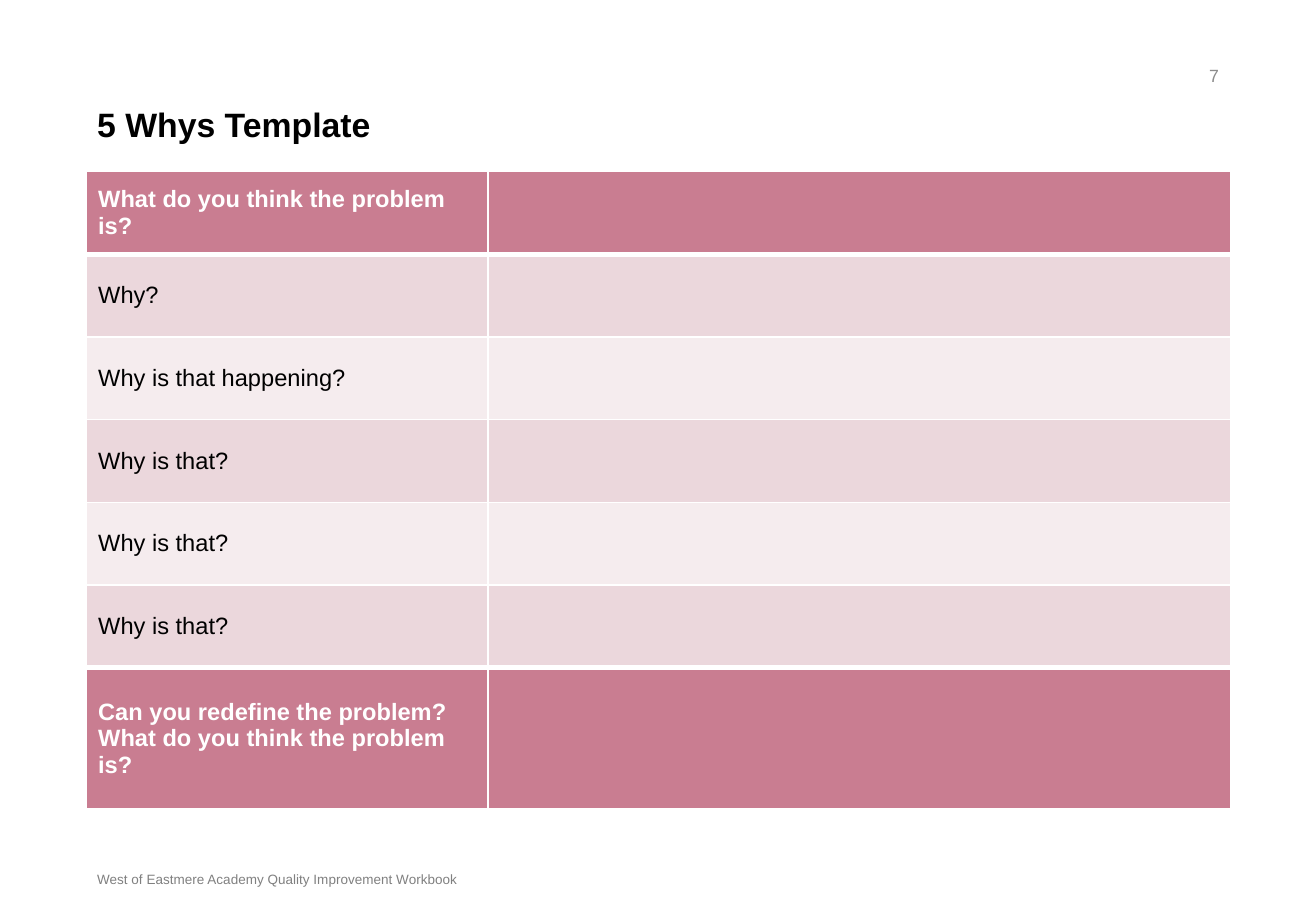
from dataclasses import dataclass

from lxml.etree import SubElement
from pptx import Presentation
from pptx.dml.color import RGBColor
from pptx.enum.text import MSO_ANCHOR, PP_ALIGN
from pptx.oxml.ns import qn
from pptx.util import Pt


@dataclass(frozen=True)
class Theme:
    font: str = "Arial"
    black: str = "000000"
    white: str = "FFFFFF"
    page_grey: str = "8C8C8C"
    footer_grey: str = "808080"
    rose: str = "C97D91"
    bands: tuple = ("EBD7DC", "F5ECEE")
    title_size: float = 20
    table_size: float = 14
    page_size: float = 10.5
    footer_size: float = 8
    thin: float = 1
    thick: float = 3


def write(frame, text, *, font, size, color, bold=False,
          align=PP_ALIGN.LEFT, spacing=None):
    """Put one formatted paragraph into a text frame."""
    para = frame.paragraphs[0]
    para.alignment = align
    if spacing:
        para.line_spacing = spacing
    span = para.add_run()
    span.text = text
    span.font.name = font
    span.font.size = Pt(size)
    span.font.bold = bold
    span.font.color.rgb = RGBColor.from_string(color)


class PageBuilder:
    def __init__(self, page, theme):
        self.page = page
        self.theme = theme

    def text(self, text, left, top, width, height, *,
             anchor=MSO_ANCHOR.TOP, **style):
        box = self.page.shapes.add_textbox(Pt(left), Pt(top), Pt(width), Pt(height))
        frame = box.text_frame
        frame.word_wrap = True
        frame.vertical_anchor = anchor
        write(frame, text, font=self.theme.font, **style)

    def borders(self, cell, top, bottom):
        """Draw the four cell edges; they must come before the fill."""
        theme = self.theme
        properties = cell._tc.get_or_add_tcPr()
        edges = {"L": theme.thin, "R": theme.thin, "T": top, "B": bottom}
        for position, (side, weight) in enumerate(edges.items()):
            line = SubElement(properties, qn(f"a:ln{side}"), w=str(Pt(weight)))
            fill = SubElement(line, qn("a:solidFill"))
            SubElement(fill, qn("a:srgbClr"), val=theme.white)
            properties.insert(position, line)

    def question_table(self, questions, left, top, widths, heights):
        """Strong first and last rows, with banded rows between them."""
        theme = self.theme
        table = self.page.shapes.add_table(
            len(questions), len(widths), Pt(left), Pt(top),
            Pt(sum(widths)), Pt(sum(heights))).table
        for column, width in zip(table.columns, widths):
            column.width = Pt(width)

        last = len(questions) - 1
        for index, (question, height) in enumerate(zip(questions, heights)):
            row = table.rows[index]
            row.height = Pt(height)
            strong = index in (0, last)
            color = theme.rose if strong else theme.bands[(index - 1) % 2]
            above = theme.thick if index in (1, last) else theme.thin
            below = theme.thick if index in (0, last - 1) else theme.thin
            for cell in row.cells:
                cell.fill.solid()
                cell.fill.fore_color.rgb = RGBColor.from_string(color)
                cell.vertical_anchor = MSO_ANCHOR.MIDDLE
                self.borders(cell, above, below)
            write(row.cells[0].text_frame, question, font=theme.font,
                  size=theme.table_size, bold=strong,
                  color=theme.white if strong else theme.black)


def main():
    deck = Presentation()
    deck.slide_width, deck.slide_height = Pt(780), Pt(540)
    theme = Theme()
    builder = PageBuilder(deck.slides.add_slide(deck.slide_layouts[6]), theme)

    # Title
    builder.text("5 Whys Template", 50.5, 60.5, 679, 55.5, spacing=0.9,
                 size=theme.title_size, color=theme.black, bold=True)

    # Questions with room for answers
    questions = [
        "What do you think the problem is?",
        "Why?",
        "Why is that happening?",
        *["Why is that?"] * 3,
        "Can you redefine the problem? What do you think the problem is?",
    ]
    builder.question_table(questions, 51, 101.75, widths=[238.25, 440.5],
                           heights=[49] * 6 + [84])

    # Page number and footer
    builder.text("7", 561, 30, 168.5, 29, anchor=MSO_ANCHOR.MIDDLE,
                 align=PP_ALIGN.RIGHT, size=theme.page_size, color=theme.page_grey)
    builder.text("West of Eastmere Academy Quality Improvement Workbook",
                 50.5, 500.5, 484.5, 29, anchor=MSO_ANCHOR.BOTTOM,
                 size=theme.footer_size, color=theme.footer_grey)

    deck.save("out.pptx")


if __name__ == "__main__":
    main()
